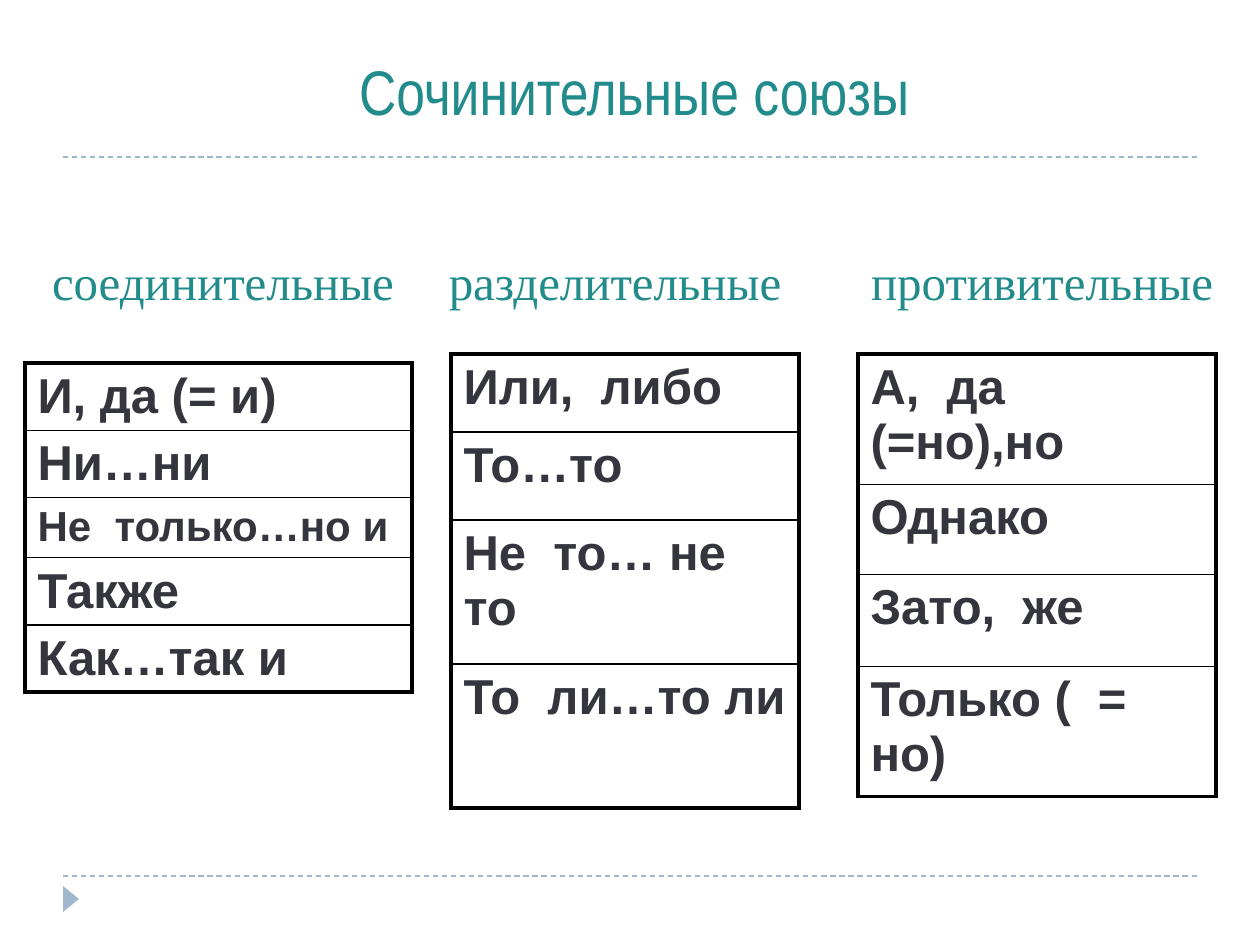
from lxml.etree import SubElement
from pptx import Presentation
from pptx.dml.color import RGBColor
from pptx.enum.dml import MSO_LINE
from pptx.enum.shapes import MSO_CONNECTOR, MSO_SHAPE
from pptx.enum.text import MSO_ANCHOR, PP_ALIGN
from pptx.oxml.ns import qn
from pptx.util import Pt

TEAL = RGBColor(0x22, 0x8B, 0x8B)
INK = RGBColor(0x35, 0x35, 0x3E)
BLUE = RGBColor(0x9F, 0xB8, 0xCD)
BLACK = RGBColor(0, 0, 0)
THICK, THIN = 2.25, 1

TITLE = "Сочинительные союзы"
HEAD_TOP, HEAD_WIDTH, HEAD_HEIGHT = 244, 360, 74
GROUPS = [
    {"head": "соединительные", "head_center": 223,
     "table_box": (25, 363, 387),
     "rows": [("И, да (= и)", 60), ("Ни…ни", 60), ("Не  только…но и", 60),
              ("Также", 60), ("Как…так и", 60)],
     "small": "Не  только…но и"},
    {"head": "разделительные", "head_center": 615,
     "table_box": (451, 354, 348),
     "rows": [("Или,  либо", 78), ("То…то", 88), ("Не  то… не то", 144),
              ("То  ли…то ли", 144)]},
    {"head": "противительные", "head_center": 1042,
     "table_box": (858, 354, 358),
     "rows": [("А,  да (=но),но", 81), ("Однако", 90), ("Зато,  же", 92),
              ("Только (  = но)", 92)]},
]
RULES_Y = (157, 876)


def px(n):
    return round(n * 914400 / 126)


def box(*sides):
    return [px(n) for n in sides]


def put_text(tf, text, size, font, color, bold=False, align=PP_ALIGN.LEFT):
    p = tf.paragraphs[0]
    p.alignment = align
    r = p.add_run()
    r.text = text
    r.font.size = Pt(size)
    r.font.name = font
    r.font.bold = bold
    r.font.color.rgb = color


def set_borders(cell, widths):
    tc_pr = cell._tc.get_or_add_tcPr()
    for side, width in zip("LRTB", widths):
        ln = SubElement(tc_pr, qn(f"a:ln{side}"), w=str(Pt(width)))
        fill = SubElement(ln, qn("a:solidFill"))
        SubElement(fill, qn("a:srgbClr"), val=str(BLACK))


def add_rule(s, y):
    line = s.shapes.add_connector(MSO_CONNECTOR.STRAIGHT, *box(63, y, 1197, y))
    line.line.color.rgb = BLUE
    line.line.width = Pt(0.75)
    line.line.dash_style = MSO_LINE.DASH
    SubElement(line._element.spPr, qn("a:effectLst"))


def add_group(s, group):
    rows = group["rows"]
    height = sum(h for _, h in rows)
    table = s.shapes.add_table(
        len(rows), 1, *box(*group["table_box"], height)).table
    table.first_row = table.horz_banding = False
    last = len(rows) - 1
    for i, (text, h) in enumerate(rows):
        table.rows[i].height = px(h)
        cell = table.cell(i, 0)
        set_borders(cell, (THICK, THICK, THICK if i == 0 else THIN,
                           THICK if i == last else THIN))
        cell.fill.background()
        size = 24 if text == group.get("small") else 28
        put_text(cell.text_frame, text, size, "Arial", INK, bold=True)

    left = group["head_center"] - HEAD_WIDTH // 2
    tf = s.shapes.add_textbox(
        *box(left, HEAD_TOP, HEAD_WIDTH, HEAD_HEIGHT)).text_frame
    tf.word_wrap = False
    tf.margin_left = tf.margin_right = 0
    tf.margin_top = px(8)
    put_text(tf, group["head"], 28, "Times New Roman", TEAL,
             align=PP_ALIGN.CENTER)


prs = Presentation()
prs.slide_width, prs.slide_height = box(1260, 945)
s = prs.slides.add_slide(prs.slide_layouts[5])

for y in RULES_Y:
    add_rule(s, y)

sp = s.shapes.add_shape(MSO_SHAPE.ISOSCELES_TRIANGLE, *box(58, 891, 26, 16))
sp.rotation = 90
sp.shadow.inherit = False
sp.fill.solid()
sp.fill.fore_color.rgb = BLUE
sp.line.fill.background()

for group in GROUPS:
    add_group(s, group)

title = s.shapes.title
title.left, title.top, title.width, title.height = box(84, 45, 1101, 108)
tf = title.text_frame
tf.word_wrap = False
tf.vertical_anchor = MSO_ANCHOR.MIDDLE
tf.margin_bottom = px(24)
put_text(tf, TITLE, 36, "Arial Narrow", TEAL, align=PP_ALIGN.CENTER)

prs.save("out.pptx")
